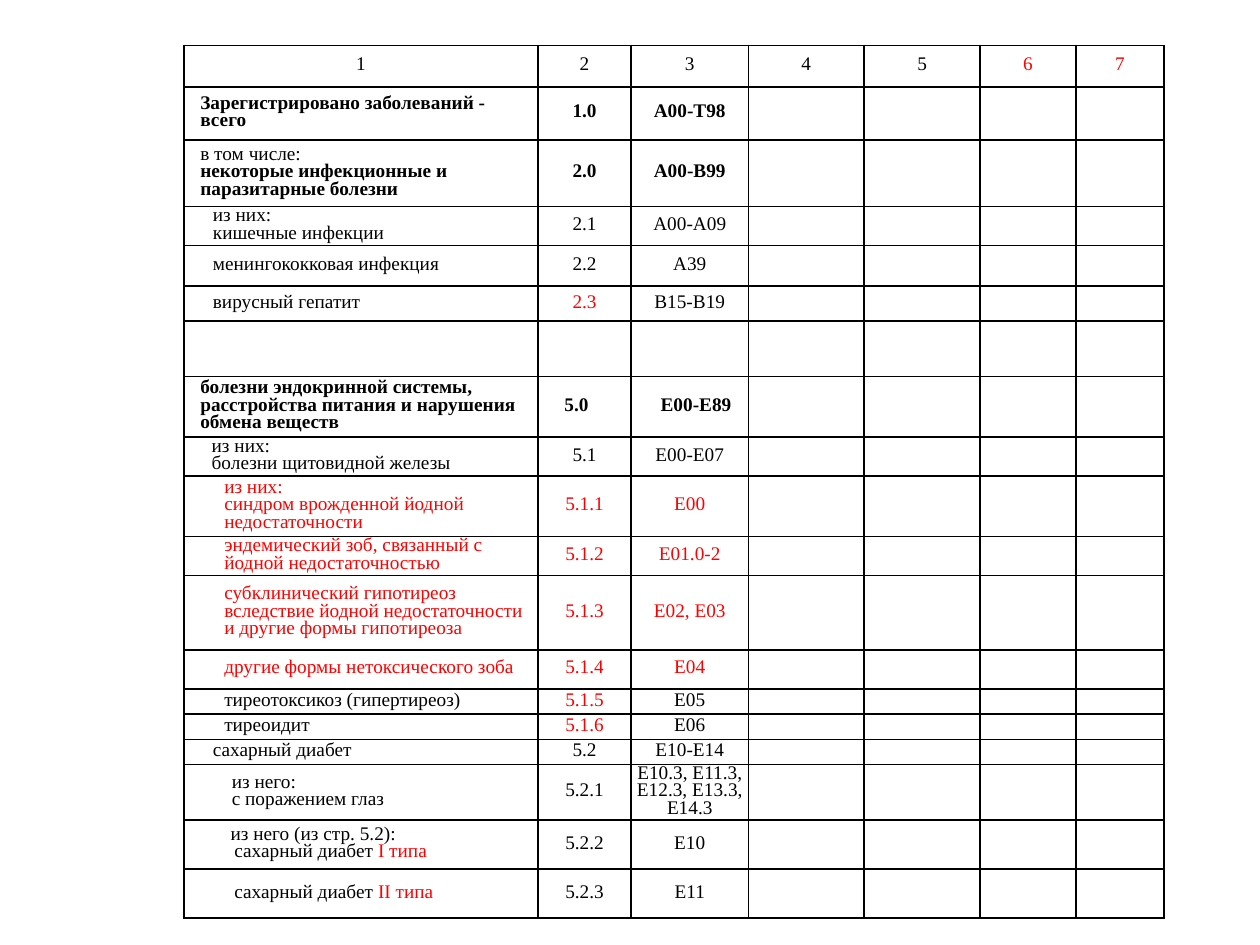
from lxml.etree import SubElement
from pptx import Presentation
from pptx.dml.color import RGBColor
from pptx.enum.text import MSO_ANCHOR, PP_ALIGN
from pptx.oxml.ns import qn
from pptx.util import Inches, Pt

FONT = "Times New Roman"
BLACK, RED = "000000", "FF0000"
COLUMN_WIDTHS = [2.81, 0.74, 0.93, 0.92, 0.92, 0.76, 0.7]
HEADER_HEIGHT = 0.33
HEADINGS = [("1", ""), ("2", ""), ("3", ""), ("4", ""), ("5", ""), ("6", "r"), ("7", "r")]

# Styles: "b" is bold, "r" is red.
# Row: height, disease lines (indent, text, style, red ending), line number, ICD codes
ROWS = [
    (0.42, [(0.1, "Зарегистрировано заболеваний - всего", "b")], ("1.0", "b"), ("А00-Т98", "b")),
    (0.53, [(0.1, "в том числе:", ""),
            (0.1, "некоторые инфекционные и паразитарные болезни", "b")],
     ("2.0", "b"), ("А00-В99", "b")),
    (0.31, [(0.2, "из них:", ""), (0.2, "кишечные инфекции", "")], ("2.1", ""), ("А00-А09", "")),
    (0.32, [(0.2, "менингококковая инфекция", "")], ("2.2", ""), ("А39", "")),
    (0.28, [(0.2, "вирусный гепатит", "")], ("2.3", "r"), ("В15-В19", "")),
    (0.44, [], None, None),
    (0.48, [(0.1, "болезни эндокринной системы, расстройства питания и нарушения обмена веществ", "b")],
     ("5.0", "b", PP_ALIGN.LEFT, 0.18), ("Е00-Е89", "b", PP_ALIGN.CENTER, 0.1)),
    (0.31, [(0.19, "из них:", ""), (0.19, "болезни щитовидной железы", "")],
     ("5.1", ""), ("Е00-Е07", "")),
    (0.48, [(0.29, "из них:", "r"), (0.29, "синдром врожденной йодной недостаточности", "r")],
     ("5.1.1", "r"), ("Е00", "r")),
    (0.31, [(0.29, "эндемический зоб, связанный с йодной недостаточностью", "r")],
     ("5.1.2", "r"), ("Е01.0-2", "r")),
    (0.59, [(0.29, "субклинический гипотиреоз вследствие йодной недостаточности "
                   "и другие формы гипотиреоза", "r")],
     ("5.1.3", "r"), ("Е02, Е03", "r")),
    (0.31, [(0.29, "другие формы нетоксического зоба", "r")], ("5.1.4", "r"), ("Е04", "r")),
    (0.2, [(0.29, "тиреотоксикоз (гипертиреоз)", "")], ("5.1.5", "r"), ("Е05", "")),
    (0.2, [(0.29, "тиреоидит", "")], ("5.1.6", "r"), ("Е06", "")),
    (0.2, [(0.2, "сахарный диабет", "")], ("5.2", ""), ("Е10-Е14", "")),
    (0.44, [(0.35, "из него:", ""), (0.35, "с поражением глаз", "")],
     ("5.2.1", ""), ("Е10.3, Е11.3,\nЕ12.3, Е13.3,\nЕ14.3", "")),
    (0.39, [(0.34, "из него (из стр. 5.2):", ""), (0.37, "сахарный диабет ", "", "I типа")],
     ("5.2.2", ""), ("Е10", "")),
    (0.39, [(0.37, "сахарный диабет ", "", "II типа")], ("5.2.3", ""), ("Е11", "")),
]


def color(value):
    return RGBColor.from_string(value)


def style_cell(cell):
    """Set margins, anchor, empty fill and thin black borders."""
    cell.margin_left = cell.margin_right = Inches(0.03)
    cell.margin_top = cell.margin_bottom = 0
    cell.vertical_anchor = MSO_ANCHOR.MIDDLE
    properties = cell._tc.get_or_add_tcPr()
    for side in ("a:lnL", "a:lnR", "a:lnT", "a:lnB"):
        line = SubElement(properties, qn(side), w=str(Pt(1)))
        SubElement(SubElement(line, qn("a:solidFill")), qn("a:srgbClr"), val=BLACK)
    cell.fill.background()


def write_lines(cell, lines, align):
    """Write one paragraph for each (indent, text, style, optional red ending)."""
    frame = cell.text_frame
    for number, (indent, text, style, *ending) in enumerate(lines or [(0, "", "")]):
        para = frame.add_paragraph() if number else frame.paragraphs[0]
        para.alignment = align
        para.line_spacing = Pt(10)
        if indent:
            para._p.get_or_add_pPr().set("marL", str(Inches(indent)))
        para.font.name = FONT
        para.font.size = Pt(11)
        para.font.bold = style == "b"
        para.font.color.rgb = color(RED if style == "r" else BLACK)
        if not text:
            para._p.get_or_add_endParaRPr().set("sz", "1100")
            continue
        para.add_run().text = text
        for red_text in ending:
            span = para.add_run()
            span.text = red_text
            span.font.color.rgb = color(RED)


def write_code(cell, text, style, align=PP_ALIGN.CENTER, indent=0):
    write_lines(cell, [(indent, part, style) for part in text.split("\n")], align)


def main():
    deck = Presentation()
    deck.slide_width, deck.slide_height = Inches(10), Inches(7.5)
    page = deck.slides.add_slide(deck.slide_layouts[6])

    heights = [HEADER_HEIGHT] + [row[0] for row in ROWS]
    table = page.shapes.add_table(
        len(heights), len(COLUMN_WIDTHS), Inches(1.46), Inches(0.36),
        Inches(sum(COLUMN_WIDTHS)), Inches(sum(heights))).table
    table.first_row = table.horz_banding = False
    for column, width in zip(table.columns, COLUMN_WIDTHS):
        column.width = Inches(width)
    for row, height in zip(table.rows, heights):
        row.height = Inches(height)
    for cell in table.iter_cells():
        style_cell(cell)

    for column, heading in enumerate(HEADINGS):
        write_code(table.cell(0, column), *heading)
    for index, (_, disease, *codes) in enumerate(ROWS, 1):
        write_lines(table.cell(index, 0), disease, PP_ALIGN.LEFT)
        for column in range(1, len(COLUMN_WIDTHS)):
            code = codes[column - 1] if column <= len(codes) else None
            write_code(table.cell(index, column), *(code or ("", "")))

    deck.save("out.pptx")


if __name__ == "__main__":
    main()
